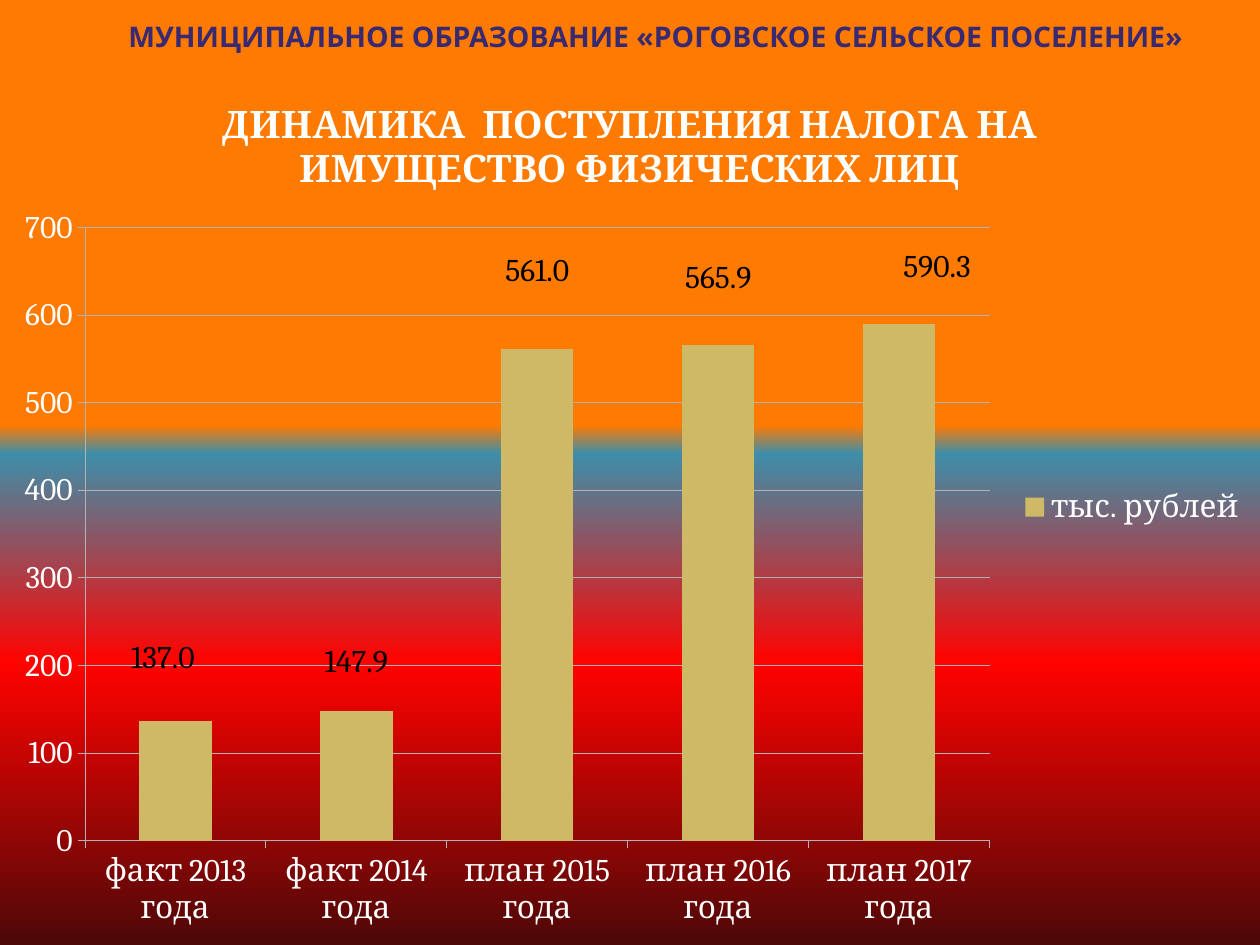
from dataclasses import dataclass

from lxml import etree
from pptx import Presentation
from pptx.chart.data import CategoryChartData as ChartData
from pptx.dml.color import RGBColor as Color
from pptx.enum.chart import XL_CHART_TYPE as ChartType
from pptx.enum.chart import XL_LEGEND_POSITION as LegendPosition
from pptx.enum.chart import XL_TICK_MARK as TickMark
from pptx.enum.text import MSO_ANCHOR as Anchor
from pptx.enum.text import PP_ALIGN as Align
from pptx.oxml import parse_xml
from pptx.oxml.ns import nsdecls, qn
from pptx.util import Pt


@dataclass(frozen=True)
class Theme:
    heading: str = "382971"
    text: str = "FFFFFF"
    label: str = "000000"
    bar: str = "CEB966"
    line: str = "B3B3B3"
    heading_font: str = "Noto Sans"
    chart_font: str = "Cambria"
    heading_size: float = 16.2
    title_size: float = 21.6
    chart_size: float = 18
    background: tuple = ((45, "FF7A00"), (48, "3E8EA9"), (70, "FF0300"), (100, "4D0808"))


THEME = Theme()
INCOME = {
    "факт 2013 года": 137.0,
    "факт 2014 года": 147.9,
    "план 2015 года": 561.0,
    "план 2016 года": 565.9,
    "план 2017 года": 590.3,
}
LABEL_SHIFTS = ((-0.01, -0.14), (0, -0.13), (0, -0.37), (0, -0.36), (0.03, -0.36))
NO_LEADER_LINES = (
    f'<c:extLst {nsdecls("c")}><c:ext uri="{{CE6537A1-D6FC-4f65-9D91-7224C49458BB}}"'
    ' xmlns:c15="http://schemas.microsoft.com/office/drawing/2012/chart">'
    '<c15:showLeaderLines val="0"/></c:ext></c:extLst>'
)


def style_font(font, name, size, color, bold=False):
    font.name, font.size, font.bold = name, Pt(size), bold
    font.color.rgb = Color.from_string(color)


def paint_background(page):
    fill = page.background.fill
    fill.gradient()
    fill.gradient_angle = 270
    stops = page.element.find(".//" + qn("a:gsLst"))
    for stop in list(stops):
        stops.remove(stop)
    for percent, color in THEME.background:
        stop = etree.SubElement(stops, qn("a:gs"), pos=str(percent * 1000))
        etree.SubElement(stop, qn("a:srgbClr"), val=color)


def add_heading(page, text):
    box = page.shapes.add_textbox(Pt(50.4), Pt(0.7), Pt(648), Pt(40.3))
    frame = box.text_frame
    frame.word_wrap = True
    frame.vertical_anchor = Anchor.MIDDLE
    para = frame.paragraphs[0]
    para.text = text
    para.alignment = Align.CENTER
    style_font(para.font, THEME.heading_font, THEME.heading_size, THEME.heading, True)


def manual_layout(inner=False, **places):
    parts = '<c:layoutTarget val="inner"/><c:xMode val="edge"/><c:yMode val="edge"/>' if inner else ""
    parts += "".join(f'<c:{key} val="{value}"/>' for key, value in places.items())
    return parse_xml(f'<c:layout {nsdecls("c")}><c:manualLayout>{parts}</c:manualLayout></c:layout>')


def place_plot(chart):
    area = chart.element.find(".//" + qn("c:plotArea"))
    for layout in area.findall(qn("c:layout")):
        area.remove(layout)
    area.insert(0, manual_layout(True, x=0.0675, y=0.181, w=0.718, h=0.7))


def style_line(line):
    line.color.rgb = Color.from_string(THEME.line)
    line.width = Pt(0.5)


def style_axis(axis):
    axis.major_tick_mark = TickMark.OUTSIDE
    axis.minor_tick_mark = TickMark.NONE
    style_line(axis.format.line)


def hide_leader_lines(labels):
    for flag in labels.findall(qn("c:showLeaderLines")):
        flag.set("val", "0")
    labels.append(parse_xml(NO_LEADER_LINES))


def label_points(series):
    labels = series.data_labels
    labels.show_value = True
    labels.number_format = "0.0"
    labels.number_format_is_linked = False
    style_font(labels.font, THEME.chart_font, THEME.chart_size, THEME.label)
    for index in range(len(LABEL_SHIFTS)):
        font = series.points[index].data_label.font
        style_font(font, THEME.chart_font, THEME.chart_size, THEME.label)
    group = labels._element
    for label, (across, down) in zip(group.findall(qn("c:dLbl")), LABEL_SHIFTS):
        label.insert(1, manual_layout(x=across, y=down))
        label.insert(2, parse_xml(f'<c:numFmt {nsdecls("c")} formatCode="0.0" sourceLinked="0"/>'))
    hide_leader_lines(group)


def add_income_chart(page, title):
    data = ChartData()
    data.categories = list(INCOME)
    data.add_series("тыс. рублей", list(INCOME.values()))
    chart = page.shapes.add_chart(
        ChartType.COLUMN_STACKED, Pt(0), Pt(39.6), Pt(720), Pt(500.4), data
    ).chart
    style_font(chart.font, THEME.chart_font, THEME.chart_size, THEME.text)

    chart.has_title = True
    para = chart.chart_title.text_frame.paragraphs[0]
    para.text = title
    style_font(para.font, THEME.chart_font, THEME.title_size, THEME.text, True)
    chart.chart_title.include_in_layout = False

    chart.has_legend = True
    chart.legend.position = LegendPosition.RIGHT
    chart.legend.include_in_layout = False

    style_axis(chart.category_axis)
    values = chart.value_axis
    style_axis(values)
    values.minimum_scale, values.maximum_scale, values.major_unit = 0, 700, 100
    values.has_major_gridlines = True
    style_line(values.major_gridlines.format.line)

    plot = chart.plots[0]
    plot.vary_by_categories = False
    plot.gap_width, plot.overlap = 150, 100
    series = plot.series[0]
    series.format.fill.solid()
    series.format.fill.fore_color.rgb = Color.from_string(THEME.bar)
    label_points(series)
    place_plot(chart)


def main():
    deck = Presentation()
    deck.slide_width, deck.slide_height = Pt(720), Pt(540)
    page = deck.slides.add_slide(deck.slide_layouts[6])
    paint_background(page)
    add_income_chart(page, "ДИНАМИКА  ПОСТУПЛЕНИЯ НАЛОГА НА ИМУЩЕСТВО ФИЗИЧЕСКИХ ЛИЦ")
    add_heading(page, "МУНИЦИПАЛЬНОЕ ОБРАЗОВАНИЕ «РОГОВСКОЕ СЕЛЬСКОЕ ПОСЕЛЕНИЕ»")
    deck.save("out.pptx")


if __name__ == "__main__":
    main()
